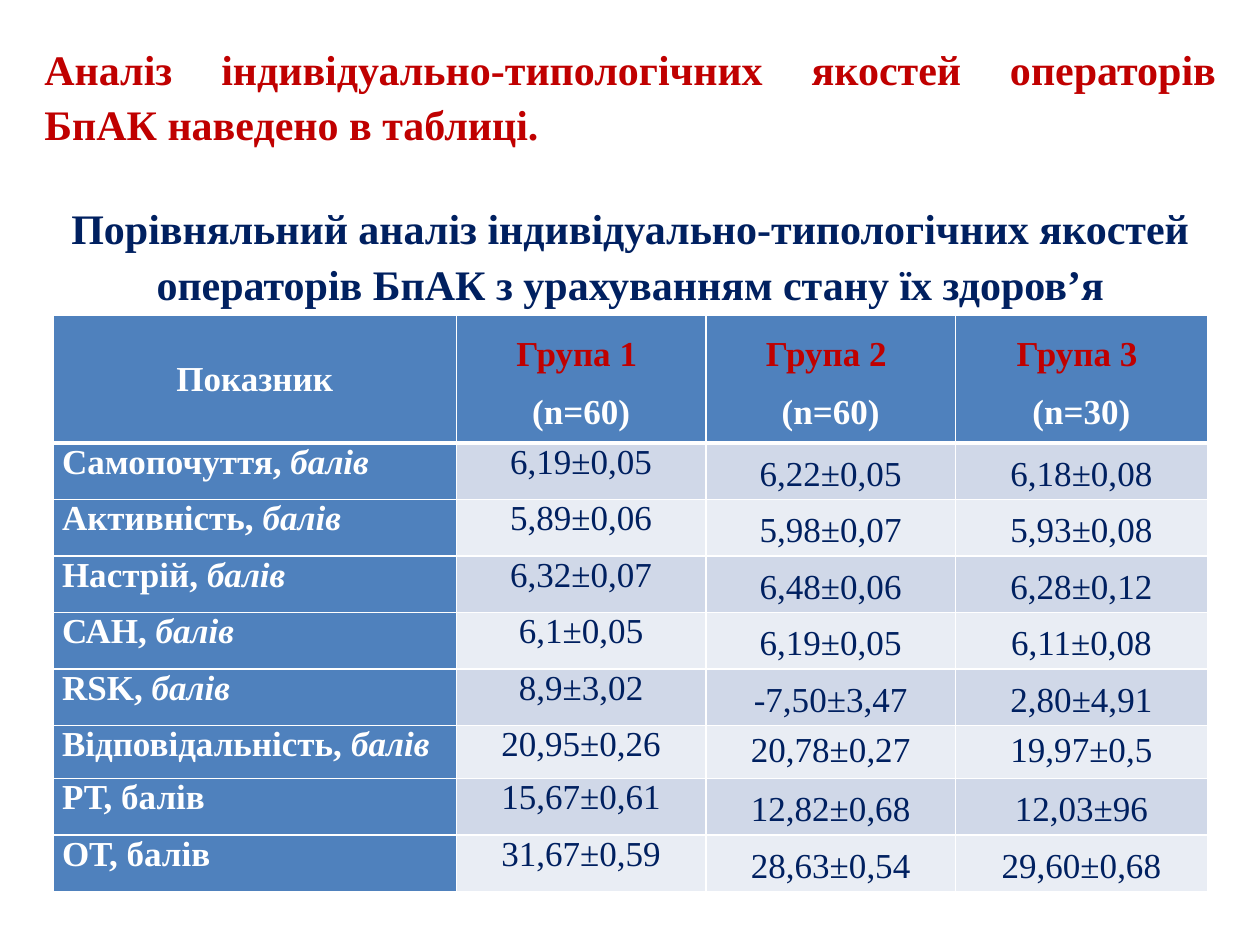
from dataclasses import dataclass

import lxml.etree
import pptx
import pptx.dml.color
import pptx.enum.text
import pptx.oxml.ns
import pptx.table
import pptx.text.text
import pptx.util

Cm = pptx.util.Cm
Pt = pptx.util.Pt
RGBColor = pptx.dml.color.RGBColor
Align = pptx.enum.text.PP_ALIGN
Anchor = pptx.enum.text.MSO_ANCHOR
qn = pptx.oxml.ns.qn

RED = RGBColor(0xC0, 0x00, 0x00)
NAVY = RGBColor(0x00, 0x20, 0x60)
WHITE = RGBColor(0xFF, 0xFF, 0xFF)
BLUE = RGBColor(0x4F, 0x81, 0xBD)
BANDS = (RGBColor(0xD0, 0xD8, 0xE8), RGBColor(0xE9, 0xED, 0xF4))
FONT = "Times New Roman"


@dataclass
class Group:
    name: str
    size: int


@dataclass
class Measure:
    name: str
    values: tuple[str, str, str]
    italic_unit: bool = True
    height: float = 1.14
    anchor: Anchor = Anchor.MIDDLE


GROUPS = [Group("Група 1 ", 60), Group("Група 2 ", 60), Group("Група 3 ", 30)]
MEASURES = [
    Measure("Самопочуття", ("6,19±0,05", "6,22±0,05", "6,18±0,08")),
    Measure("Активність", ("5,89±0,06", "5,98±0,07", "5,93±0,08")),
    Measure("Настрій", ("6,32±0,07", "6,48±0,06", "6,28±0,12")),
    Measure("САН", ("6,1±0,05", "6,19±0,05", "6,11±0,08")),
    Measure("RSK", ("8,9±3,02", "-7,50±3,47", "2,80±4,91")),
    Measure("Відповідальність", ("20,95±0,26", "20,78±0,27", "19,97±0,5"),
            height=1.07, anchor=Anchor.TOP),
    Measure("РТ", ("15,67±0,61", "12,82±0,68", "12,03±96"), italic_unit=False),
    Measure("ОТ", ("31,67±0,59", "28,63±0,54", "29,60±0,68"), italic_unit=False),
]
COLUMN_WIDTHS = (8.13, 5.03, 5.03, 5.08)
ROW_HEIGHTS = [2.57] + [measure.height for measure in MEASURES]


def format_paragraph(para: pptx.text.text._Paragraph, size: float, color: RGBColor,
                     align: Align, bold: bool = True, line_spacing: float = 1.0,
                     space_after: float = 0) -> None:
    para.alignment = align
    para.line_spacing = line_spacing
    para.space_before = Pt(0)
    para.space_after = Pt(space_after)
    para.font.name = FONT
    para.font.size = Pt(size)
    para.font.bold = bold
    para.font.color.rgb = color


def style_cell(cell: pptx.table._Cell, fill: RGBColor, anchor: Anchor = Anchor.TOP,
               top: float = 1, bottom: float = 1) -> None:
    cell.margin_left = cell.margin_right = Cm(0.18)
    cell.margin_top = cell.margin_bottom = 0
    cell.vertical_anchor = anchor
    properties = cell._tc.get_or_add_tcPr()
    for side, width in (("L", 1), ("R", 1), ("T", top), ("B", bottom)):
        line = lxml.etree.SubElement(properties, qn(f"a:ln{side}"), w=str(Pt(width)))
        paint = lxml.etree.SubElement(line, qn("a:solidFill"))
        lxml.etree.SubElement(paint, qn("a:srgbClr"), val=str(WHITE))
    cell.fill.solid()
    cell.fill.fore_color.rgb = fill


def fill_header(table: pptx.table.Table) -> None:
    corner = table.cell(0, 0)
    style_cell(corner, BLUE, Anchor.MIDDLE, bottom=3)
    corner.text = "Показник"
    format_paragraph(corner.text_frame.paragraphs[0], 20, WHITE, Align.CENTER, space_after=3.8)
    for column, group in enumerate(GROUPS, start=1):
        cell = table.cell(0, column)
        style_cell(cell, BLUE, bottom=3)
        cell.text = f"{group.name}\n(n={group.size})"
        for para, color in zip(cell.text_frame.paragraphs, (RED, WHITE)):
            format_paragraph(para, 20, color, Align.CENTER, line_spacing=1.5)


def fill_measure(table: pptx.table.Table, row: int, measure: Measure) -> None:
    top = 3 if row == 1 else 1
    label = table.cell(row, 0)
    style_cell(label, BLUE, top=top)
    para = label.text_frame.paragraphs[0]
    format_paragraph(para, 20, WHITE, Align.LEFT, space_after=3.8)
    para.add_run().text = f"{measure.name}, "
    unit = para.add_run()
    unit.text = "балів"
    unit.font.italic = measure.italic_unit
    for column, value in enumerate(measure.values, start=1):
        first = column == 1
        cell = table.cell(row, column)
        style_cell(cell, BANDS[(row - 1) % 2], Anchor.TOP if first else measure.anchor, top=top)
        cell.text = value
        format_paragraph(cell.text_frame.paragraphs[0], 20, NAVY, Align.CENTER, bold=False,
                         line_spacing=1.0 if first else 1.15, space_after=3.8 if first else 0)


def add_heading(page) -> None:
    box = page.shapes.title
    box.left, box.top, box.width, box.height = Cm(0.64), Cm(0.64), Cm(24.13), Cm(6.4)
    frame = box.text_frame
    frame.word_wrap = True
    frame.auto_size = pptx.enum.text.MSO_AUTO_SIZE.NONE
    frame.vertical_anchor = Anchor.TOP
    frame.text = (
        "Аналіз індивідуально-типологічних якостей операторів БпАК наведено в таблиці.\n"
        "Порівняльний аналіз індивідуально-типологічних якостей операторів БпАК "
        "з урахуванням стану їх здоров’я"
    )
    intro, caption = frame.paragraphs
    format_paragraph(intro, 24, RED, Align.JUSTIFY, line_spacing=1.1)
    format_paragraph(caption, 24, NAVY, Align.CENTER, line_spacing=1.1)
    caption.space_before = Pt(28)


def add_measure_table(page) -> None:
    table = page.shapes.add_table(
        len(ROW_HEIGHTS), len(COLUMN_WIDTHS), Cm(1.07), Cm(6.36),
        Cm(sum(COLUMN_WIDTHS)), Cm(sum(ROW_HEIGHTS))).table
    table.horz_banding = False
    for column, width in zip(table.columns, COLUMN_WIDTHS):
        column.width = Cm(width)
    for row, height in zip(table.rows, ROW_HEIGHTS):
        row.height = Cm(height)
    fill_header(table)
    for row, measure in enumerate(MEASURES, start=1):
        fill_measure(table, row, measure)


def main() -> None:
    deck = pptx.Presentation()
    deck.slide_width, deck.slide_height = Cm(25.4), Cm(19.05)
    page = deck.slides.add_slide(deck.slide_layouts[5])
    add_heading(page)
    add_measure_table(page)
    deck.save("out.pptx")


if __name__ == "__main__":
    main()
